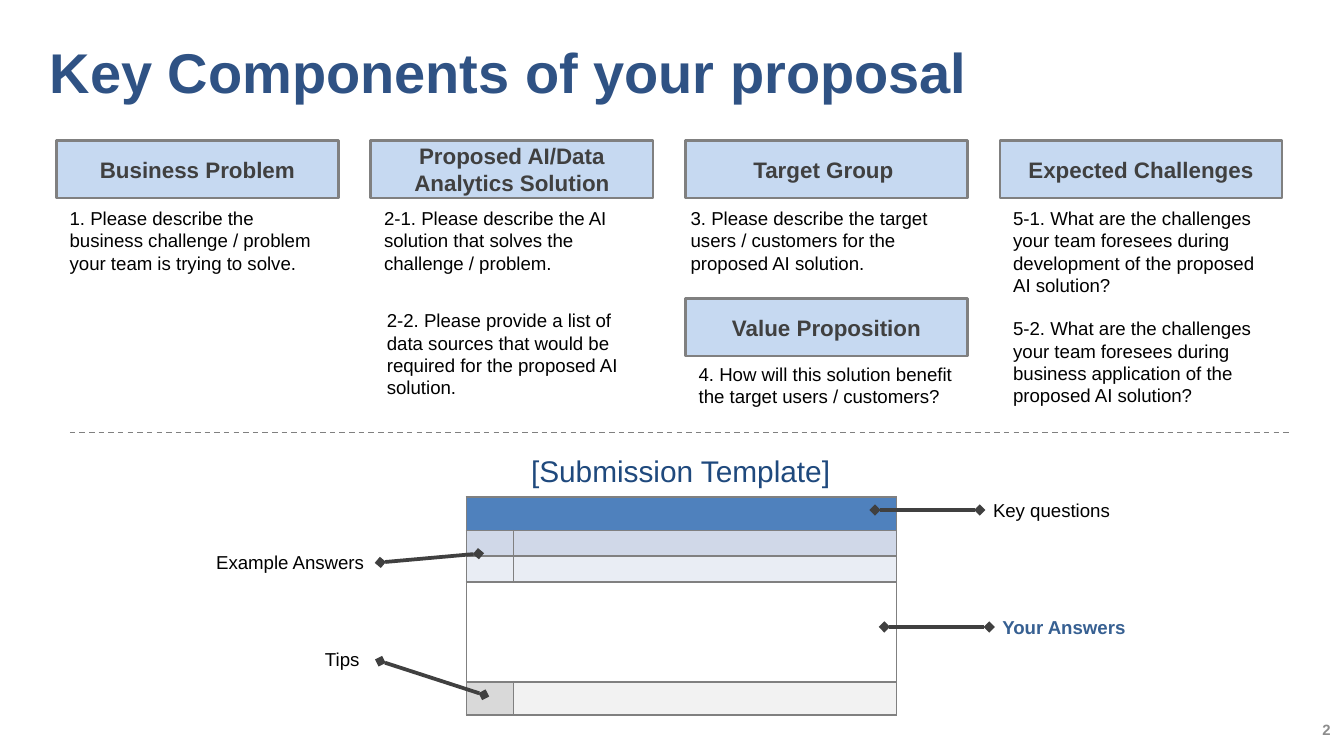
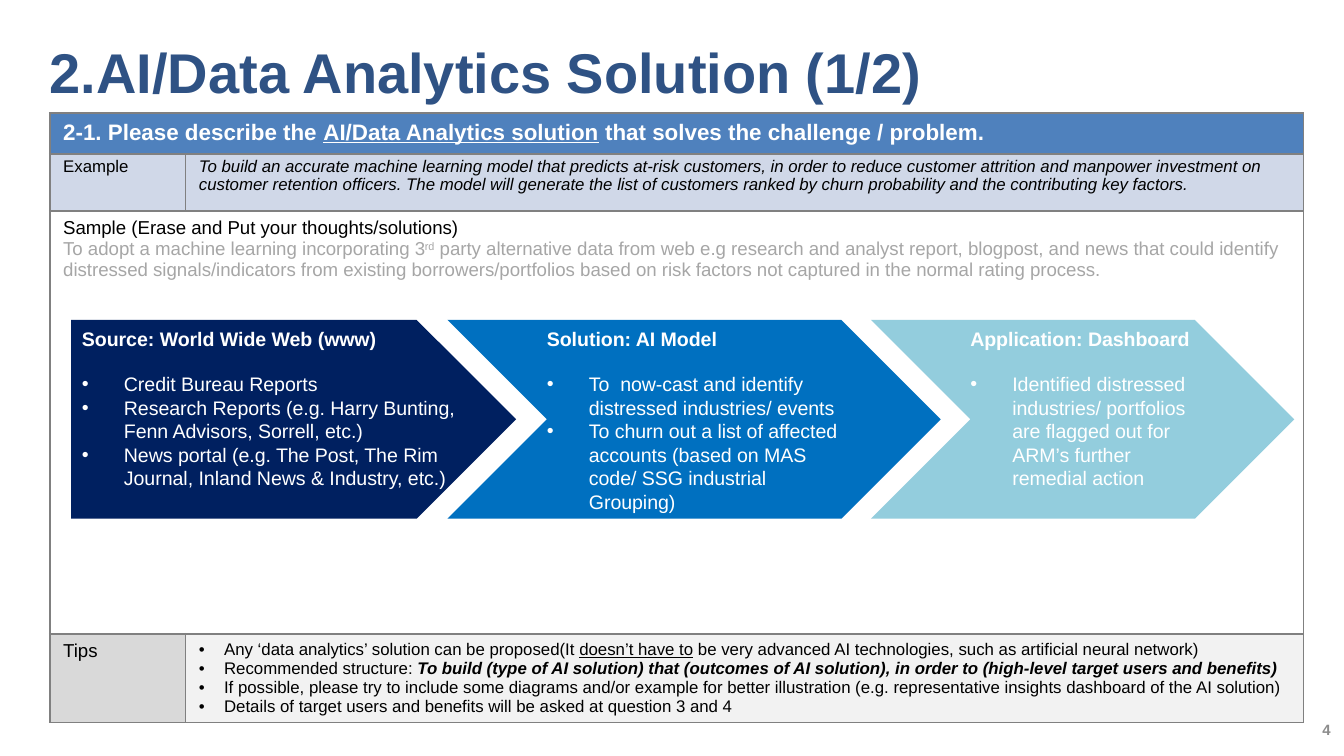
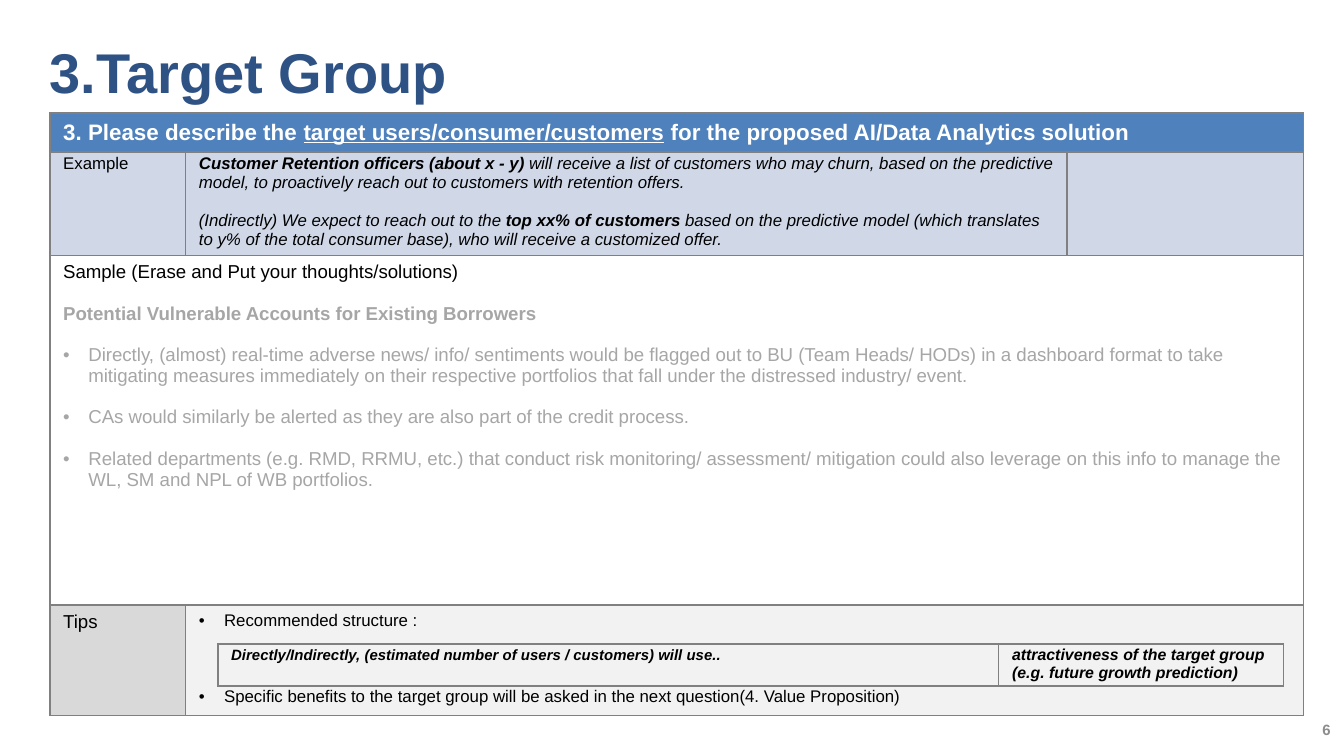
from lxml.etree import SubElement
from pptx import Presentation
from pptx.dml.color import RGBColor
from pptx.enum.dml import MSO_LINE
from pptx.enum.shapes import MSO_CONNECTOR, MSO_SHAPE
from pptx.enum.text import MSO_ANCHOR, MSO_AUTO_SIZE, PP_ALIGN
from pptx.oxml.ns import qn
from pptx.util import Pt

FONT = "Arial"
COLORS = {
    "title": "2F5284", "number": "8C8C8C", "black": "000000", "white": "FFFFFF",
    "muted": "A6A6A6", "dark": "404040", "border": "808080", "heading": "C6D9F1",
    "caption": "1F497D", "answer": "376092", "question": "4F81BD",
    "example": "D0D8E8", "example_light": "E9EDF4", "tips": "D9D9D9",
    "tips_light": "F2F2F2", "source": "002060", "solution": "0070C0",
    "application": "93CDDD",
}
CELL_MARGINS = (7.2, 3.6, 7.2, 3.6)
TIGHT_MARGINS = (7.2, 1.44, 7.2, 1.44)
SIDE_LEFT, SIDE_RIGHT = 1, 3
TABLE_LEFT, TABLE_TOP = 26.64, 60.48


def rgb(name):
    return RGBColor.from_string(COLORS[name])


def write(frame, text, size=10, color="black", bold=False, italic=False,
          align=PP_ALIGN.LEFT, indent=0, before=0, spacing=1.0):
    """Append a paragraph; text is a string or a list of strings and (string, font options)."""
    paragraph = frame.paragraphs[0]
    if paragraph.runs:
        paragraph = frame.add_paragraph()
    if indent:
        properties = paragraph._p.get_or_add_pPr()
        properties.set("marL", str(Pt(indent)))
        properties.set("indent", str(-Pt(indent)))
        SubElement(properties, qn("a:buFont")).set("typeface", FONT)
        SubElement(properties, qn("a:buChar")).set("char", "•")
    paragraph.alignment = align
    paragraph.line_spacing = spacing
    if before:
        paragraph.space_before = Pt(before)
    for piece in [text] if isinstance(text, str) else text:
        words, options = (piece, {}) if isinstance(piece, str) else piece
        run = paragraph.add_run()
        run.text = words
        run.font.name = FONT
        run.font.size = Pt(size)
        run.font.color.rgb = rgb(color)
        run.font.bold = options.get("bold", bold)
        run.font.italic = options.get("italic", italic)
        if options.get("underline"):
            run.font.underline = True
        if options.get("superscript"):
            run._r.get_or_add_rPr().set("baseline", "30000")


def set_margins(target, margins):
    (target.margin_left, target.margin_top,
     target.margin_right, target.margin_bottom) = map(Pt, margins)


class Deck:
    def __init__(self):
        self.presentation = Presentation()
        self.presentation.slide_width = Pt(720)
        self.presentation.slide_height = Pt(405)
        self.slide = None

    def add_slide(self, title, number):
        self.slide = self.presentation.slides.add_slide(self.presentation.slide_layouts[5])
        shape = self.slide.shapes.title
        shape.left, shape.top, shape.width, shape.height = map(Pt, (26.64, 20.16, 561.6, 56.88))
        frame = shape.text_frame
        frame.word_wrap = True
        frame.auto_size = MSO_AUTO_SIZE.NONE
        frame.vertical_anchor = MSO_ANCHOR.TOP
        set_margins(frame, (0, 0, 0, 0))
        write(frame, title, size=30, color="title", bold=True)
        number_box = self.text(number, 673.2, 376.56, 46.8, 28.8, size=8, color="number",
                               bold=True, align=PP_ALIGN.RIGHT, grow=False)
        number_box.text_frame.vertical_anchor = MSO_ANCHOR.MIDDLE

    def text(self, text, left, top, width, height, wrap=True, grow=True,
             margins=CELL_MARGINS, **text_format):
        shape = self.slide.shapes.add_textbox(Pt(left), Pt(top), Pt(width), Pt(height))
        frame = shape.text_frame
        frame.word_wrap = wrap
        frame.auto_size = MSO_AUTO_SIZE.SHAPE_TO_FIT_TEXT if grow else MSO_AUTO_SIZE.NONE
        set_margins(frame, margins)
        write(frame, text, **text_format)
        return shape

    def shape(self, kind, left, top, width, height, fill, margins, line=None,
              anchor=MSO_ANCHOR.TOP):
        """Add a preset shape and give back its text frame."""
        shape = self.slide.shapes.add_shape(kind, Pt(left), Pt(top), Pt(width), Pt(height))
        shape.shadow.inherit = False
        shape.fill.solid()
        shape.fill.fore_color.rgb = rgb(fill)
        if line:
            shape.line.color.rgb = rgb(line)
            shape.line.width = Pt(1.5)
        else:
            shape.line.fill.background()
        frame = shape.text_frame
        frame.word_wrap = True
        frame.vertical_anchor = anchor
        set_margins(frame, margins)
        return frame

    def line(self, start, end, color, width, dashed=False, diamonds=False):
        connector = self.slide.shapes.add_connector(
            MSO_CONNECTOR.STRAIGHT, *map(Pt, (*start, *end)))
        connector.line.color.rgb = rgb(color)
        connector.line.width = Pt(width)
        if dashed:
            connector.line.dash_style = MSO_LINE.DASH
        if diamonds:
            outline = connector.line._get_or_add_ln()
            for tag in ("a:headEnd", "a:tailEnd"):
                SubElement(outline, qn(tag)).set("type", "diamond")
        SubElement(connector._element.spPr, qn("a:effectLst"))
        return connector

    def table(self, left, top, columns, rows, fills, merges=(), tight_rows=()):
        """Add a bordered table; merges are (row, first column, last column)."""
        table = self.slide.shapes.add_table(
            len(rows), len(columns), Pt(left), Pt(top), Pt(sum(columns)), Pt(sum(rows))).table
        table.first_row = table.horz_banding = False
        for column, width in zip(table.columns, columns):
            column.width = Pt(width)
        for row_index, (row, height) in enumerate(zip(table.rows, rows)):
            row.height = Pt(height)
            for cell, fill in zip(row.cells, fills[row_index]):
                set_margins(cell, TIGHT_MARGINS if row_index in tight_rows else CELL_MARGINS)
                self.format_cell(cell, fill)
        for row, first, last in merges:
            table.cell(row, first).merge(table.cell(row, last))
        return table

    def format_cell(self, cell, fill):
        properties = cell._tc.get_or_add_tcPr()
        for side in ("a:lnL", "a:lnR", "a:lnT", "a:lnB"):
            border = SubElement(properties, qn(side), w=str(Pt(1)))
            color = SubElement(SubElement(border, qn("a:solidFill")), qn("a:srgbClr"))
            color.set("val", COLORS["border"])
        if fill:
            cell.fill.solid()
            cell.fill.fore_color.rgb = rgb(fill)
        else:
            cell.fill.background()
        # Keeps empty cells from stretching their row
        cell.text_frame.paragraphs[0]._p.get_or_add_endParaRPr().set("sz", "600")

    def answer_table(self, columns, rows, question, tips_merge=False):
        """Add the question, example, answer and tips grid with its fixed labels."""
        last = len(columns) - 1
        fills = [["question"] * (last + 1), ["example"] * (last + 1),
                 ["white"] * (last + 1), ["tips"] + ["tips_light"] * last]
        merges = [(0, 0, last), (2, 0, last)] + ([(3, 1, last)] if tips_merge else [])
        table = self.table(TABLE_LEFT, TABLE_TOP, columns, rows, fills, merges, tight_rows=(1,))
        write(table.cell(0, 0).text_frame, question, size=12, color="white", bold=True)
        write(table.cell(1, 0).text_frame, "Example", size=9)
        write(table.cell(2, 0).text_frame, "Sample (Erase and Put your thoughts/solutions)")
        write(table.cell(3, 0).text_frame, "Tips")
        return [table.cell(row, column).text_frame for row, column in ((1, 1), (2, 0), (3, 1))]


def add_components_slide(deck):
    deck.add_slide("Key Components of your proposal", "2")

    first_left, step, width = 30.24, 168.48, 151.2
    headings = [("Business Problem", 0, 75.2),
                ("Proposed AI/Data Analytics Solution", 1, 75.2),
                ("Target Group ", 2, 75.2), ("Value Proposition", 2, 159.84),
                ("Expected Challenges", 3, 75.2)]
    for heading, column, top in headings:
        frame = deck.shape(MSO_SHAPE.RECTANGLE, first_left + step * column, top, width, 30.96,
                           "heading", (5, 2.9, 5, 2.9), line="border", anchor=MSO_ANCHOR.MIDDLE)
        write(frame, heading, size=12, color="dark", bold=True, align=PP_ALIGN.CENTER)

    questions = [
        ("1. Please describe the business challenge / problem your team is trying to solve.",
         30.24, 107.28, width, 43.92),
        ("2-1. Please describe the AI solution that solves the challenge / problem.",
         198.72, 107.28, width, 43.92),
        ("2-2. Please provide a list of data sources that would be required for the proposed "
         "AI solution.", 200.16, 162, 149.76, 55.44),
        ("3. Please describe the target users / customers for the proposed AI solution.",
         362.88, 107.28, 166.32, 43.92),
        ("4. How will this solution benefit the target users / customers?",
         367.2, 190.8, width, 31.68),
        ("5-1. What are the challenges your team foresees during development of the proposed "
         "AI solution?", 535.68, 107.28, width, 55.44),
        ("5-2. What are the challenges your team foresees during business application of the "
         "proposed AI solution?", 535.68, 166.32, width, 55.44),
    ]
    for question in questions:
        deck.text(*question)

    deck.line((37.44, 231.84), (690.48, 231.84), "border", 0.75, dashed=True)
    deck.text("[Submission Template]", 275.76, 244.8, 177.84, 21.6, wrap=False, grow=False,
              margins=(0, 0, 0, 0), size=16, color="caption", align=PP_ALIGN.CENTER, spacing=0.9)
    deck.table(249.84, 266.4, (25.2, 205.2), (17.8, 13.8, 13.8, 53.5, 17.8),
               [["question"] * 2, ["example"] * 2, ["example_light"] * 2, ["white"] * 2,
                ["tips", "tips_light"]],
               merges=[(0, 0, 1), (3, 0, 1)], tight_rows=range(5))

    labels = [
        ("Key questions", 524.88, 263.52, 77.76, {}, (468.72, 273.24), (524.88, 273.24),
         SIDE_LEFT),
        ("Example Answers", 108.72, 291.6, 95.04, {}, (203.76, 301.32), (256.32, 296.64),
         SIDE_RIGHT),
        ("Your Answers", 529.92, 326.16, 82.08, {"color": "answer", "bold": True},
         (473.76, 335.88), (529.92, 335.88), SIDE_LEFT),
        ("Tips", 167.04, 343.44, 33.84, {}, (203.76, 354.24), (259.2, 372.24), None),
    ]
    for text, left, top, label_width, text_format, start, end, side in labels:
        label = deck.text(text, left, top, label_width, 19.44, wrap=False, **text_format)
        pointer = deck.line(start, end, "dark", 2, diamonds=True)
        if side == SIDE_LEFT:
            pointer.end_connect(label, side)
        elif side == SIDE_RIGHT:
            pointer.begin_connect(label, side)


def add_solution_slide(deck):
    deck.add_slide("2.AI/Data Analytics Solution (1/2)", "4")
    example, answer, tips = deck.answer_table(
        (72.72, 599.04), (22.1, 30.6, 226.4, 47.5),
        ["2-1. Please describe the ", ("AI/Data Analytics solution", {"underline": True}),
         " that solves the challenge / problem."])
    write(example, "To build an accurate machine learning model that predicts at-risk customers, "
          "in order to reduce customer attrition and manpower investment on customer retention "
          "officers. The model will generate the list of customers ranked by churn probability "
          "and the contributing key factors.", size=9, italic=True)
    write(answer, ["To adopt a machine learning incorporating 3", ("rd", {"superscript": True}),
                   " party alternative data from web e.g research and analyst report, blogpost, "
                   "and news that could identify distressed signals/indicators from existing "
                   "borrowers/portfolios based on risk factors not captured in the normal rating "
                   "process."], color="muted")
    tip_lines = [
        ["Any ‘data analytics’ solution can be proposed(It ",
         ("doesn’t have to", {"underline": True}),
         " be very advanced AI technologies, such as artificial neural network)"],
        ["Recommended structure: ",
         ("To build (type of AI solution) that (outcomes of AI solution), in order to "
          "(high-level target users and benefits)", {"bold": True, "italic": True})],
        "If possible, please try to include some diagrams and/or example for better illustration "
        "(e.g. representative insights dashboard of the AI solution)",
        "Details of target users and benefits will be asked at question 3 and 4",
    ]
    for tip in tip_lines:
        write(tips, tip, size=9, indent=13.5)

    steps = [
        (MSO_SHAPE.PENTAGON, 38.16, 238.32, "source", 5.76, "Source: World Wide Web (www)",
         ["Credit Bureau Reports",
          "Research Reports (e.g. Harry Bunting, Fenn Advisors, Sorrell, etc.)",
          "News portal (e.g. The Post, The Rim Journal, Inland News & Industry, etc.)"]),
        (MSO_SHAPE.CHEVRON, 239.76, 264.24, "solution", 0, "Solution: AI Model",
         ["To  now-cast and identify distressed industries/ events",
          "To churn out a list of affected accounts (based on MAS code/ SSG industrial "
          "Grouping)"]),
        (MSO_SHAPE.CHEVRON, 466.56, 226.8, "application", 0, "Application: Dashboard",
         ["Identified distressed industries/ portfolios are flagged out for ARM’s further "
          "remedial action"]),
    ]
    for kind, left, width, fill, side_margin, heading, points in steps:
        frame = deck.shape(kind, left, 171.36, width, 106.56, fill,
                           (side_margin, 3.6, side_margin, 3.6))
        write(frame, heading, size=10.5, color="white", bold=True)
        for index, point in enumerate(points):
            write(frame, point, size=10.5, color="white", indent=22.5,
                  before=0 if index else 12)


def add_target_slide(deck):
    deck.add_slide("3.Target Group", "6")
    example, answer, tips = deck.answer_table(
        (72.72, 472.32, 126.72), (20.9, 55.4, 187.2, 59.4),
        ["3. Please describe the ", ("target users/consumer/customers", {"underline": True}),
         " for the proposed AI/Data Analytics solution"], tips_merge=True)
    strong = {"bold": True}
    write(example, [("Customer Retention officers (about x - y)", strong),
                    " will receive a list of customers who may churn, based on the predictive "
                    "model, to proactively reach out to customers with retention offers."],
          size=9, italic=True)
    write(example, ["(Indirectly) We expect to reach out to the ",
                    ("top xx% of customers", strong),
                    " based on the predictive model (which translates to y% of the total "
                    "consumer base), who will receive a customized offer."],
          size=9, italic=True, before=10.3)
    write(answer, "Potential Vulnerable Accounts for Existing Borrowers", color="muted",
          bold=True, before=11)
    for point in (
            "Directly, (almost) real-time adverse news/ info/ sentiments would be flagged out to "
            "BU (Team Heads/ HODs) in a dashboard format to take mitigating measures immediately "
            "on their respective portfolios that fall under the distressed industry/ event.",
            "CAs would similarly be alerted as they are also part of the credit process.",
            "Related departments (e.g. RMD, RRMU, etc.) that conduct risk monitoring/ assessment/ "
            "mitigation could also leverage on this info to manage the WL, SM and NPL of WB "
            "portfolios."):
        write(answer, point, color="muted", indent=13.5, before=11)
    write(tips, "Recommended structure :", size=9, indent=13.5)
    write(tips, "Specific benefits to the target group will be asked in the next question"
          "(4. Value Proposition)", size=9, indent=13.5, before=30.5)

    structure = deck.table(116.64, 344.88, (418.32, 152.64), (22.5,), [[None, None]],
                           tight_rows=(0,))
    write(structure.cell(0, 0).text_frame, "Directly/Indirectly, (estimated number of users / "
          "customers) will use..", size=8, bold=True, italic=True)
    for line in ("attractiveness of the target group", "(e.g. future growth prediction)"):
        write(structure.cell(0, 1).text_frame, line, size=8.5, bold=True, italic=True)


def main():
    deck = Deck()
    add_components_slide(deck)
    add_solution_slide(deck)
    add_target_slide(deck)
    deck.presentation.save("out.pptx")


if __name__ == "__main__":
    main()
